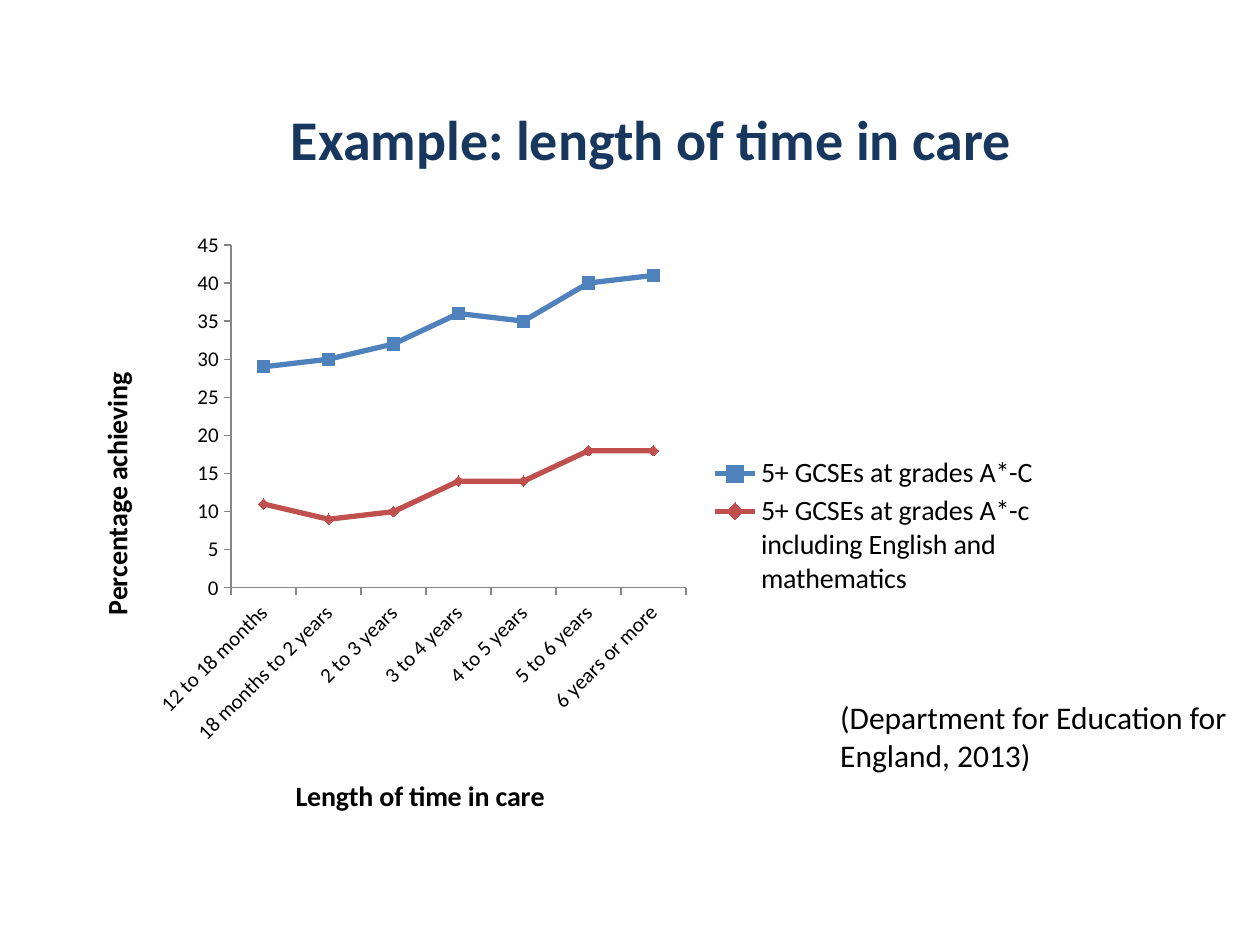
from lxml import etree
from pptx import Presentation
from pptx.chart.data import CategoryChartData
from pptx.dml.color import RGBColor
from pptx.enum.chart import XL_CHART_TYPE, XL_LEGEND_POSITION, XL_MARKER_STYLE, XL_TICK_MARK
from pptx.enum.text import MSO_ANCHOR, PP_ALIGN
from pptx.oxml.ns import qn
from pptx.util import Inches, Pt

LINE = XL_CHART_TYPE.LINE_MARKERS
RIGHT = XL_LEGEND_POSITION.RIGHT
SQUARE, DIAMOND = XL_MARKER_STYLE.SQUARE, XL_MARKER_STYLE.DIAMOND
OUT = XL_TICK_MARK.OUTSIDE
MIDDLE, TOP = MSO_ANCHOR.MIDDLE, MSO_ANCHOR.TOP
CENTER, LEFT = PP_ALIGN.CENTER, PP_ALIGN.LEFT

COLORS = {"navy": "17375E", "black": "000000", "blue": "4F81BD", "red": "C0504D", "gray": "868686"}
TIMES = ["12 to 18 months", "18 months to 2 years", "2 to 3 years", "3 to 4 years",
         "4 to 5 years", "5 to 6 years", "6 years or more"]
SERIES = [
    ("5+ GCSEs at grades A*-C", [29, 30, 32, 36, 35, 40, 41], "blue", SQUARE, 7),
    ("5+ GCSEs at grades A*-c including English and mathematics",
     [11, 9, 10, 14, 14, 18, 18], "red", DIAMOND, 6),
]


def rgb(name):
    return RGBColor.from_string(COLORS[name])


def style(font, size, color="black", bold=False):
    looks = {"name": "Calibri", "size": Pt(size), "bold": bold}
    for key, value in looks.items():
        setattr(font, key, value)
    font.color.rgb = rgb(color)


def pin(parent, index, **place):
    """Fix a chart part at fractions of the chart's size."""
    for old in parent.findall(qn("c:layout")):
        parent.remove(old)
    layout = etree.Element(qn("c:layout"))
    manual = etree.SubElement(layout, qn("c:manualLayout"))
    if parent.tag == qn("c:plotArea"):
        place = {"layoutTarget": "inner", **place}
    place = {**place}
    modes = {"xMode": "edge", "yMode": "edge"}
    target = place.pop("layoutTarget", None)
    if target:
        modes = {"layoutTarget": target, **modes}
    for key, value in {**modes, **place}.items():
        etree.SubElement(manual, qn(f"c:{key}")).set("val", str(value))
    parent.insert(index, layout)


def add_text(slide, box, text, size, color="black", bold=False, align=LEFT, anchor=TOP):
    frame = slide.shapes.add_textbox(*map(Inches, box)).text_frame
    frame.word_wrap = True
    frame.vertical_anchor = anchor
    para = frame.paragraphs[0]
    para.alignment = align
    run = para.add_run()
    run.text = text
    style(run.font, size, color, bold)


def set_axis(axis, title, x, y):
    looks = {"has_major_gridlines": False, "major_tick_mark": OUT}
    for key, value in looks.items():
        setattr(axis, key, value)
    style(axis.tick_labels.font, 12)
    axis.format.line.color.rgb = rgb("gray")
    frame = axis.axis_title.text_frame
    frame.text = title
    style(frame.paragraphs[0].runs[0].font, 16, bold=True)
    pin(axis.axis_title._element, 1, x=x, y=y)


def add_lines(slide, box):
    data = CategoryChartData()
    data.categories = TIMES
    for name, values, *_ in SERIES:
        data.add_series(name, values)
    chart = slide.shapes.add_chart(LINE, *map(Inches, box), data).chart
    style(chart.font, 10)
    chart.has_title = False
    pin(chart._chartSpace.chart.plotArea, 0, x=0.17, y=0.04, w=0.46, h=0.56)

    set_axis(chart.category_axis, "Length of time in care", 0.23, 0.9)
    set_axis(chart.value_axis, "Percentage achieving", 0.03, 0.24)
    scale = {"minimum_scale": 0, "maximum_scale": 45, "major_unit": 5}
    for key, value in scale.items():
        setattr(chart.value_axis, key, value)

    chart.has_legend = True
    legend = chart.legend
    legend.position = RIGHT
    legend.include_in_layout = False
    style(legend.font, 16)
    pin(legend._element, 1, x=0.65, y=0.38, w=0.34, h=0.24)

    for line, (_, _, color, mark, size) in zip(chart.plots[0].series, SERIES):
        line.smooth = False
        line.format.line.width = Pt(3)
        line.format.line.color.rgb = rgb(color)
        line.marker.style = mark
        line.marker.size = size
        fill = line.marker.format.fill
        fill.solid()
        fill.fore_color.rgb = rgb(color)
        line.marker.format.line.color.rgb = rgb(color)


def main():
    deck = Presentation()
    deck.slide_width, deck.slide_height = Inches(10), Inches(7.5)
    slide = deck.slides.add_slide(deck.slide_layouts[6])
    add_text(slide, (0.67, 0.47, 9, 1.25), "Example: length of time in care",
             32, "navy", True, CENTER, MIDDLE)
    add_lines(slide, (0.5, 1.75, 7.85, 4.86))
    add_text(slide, (6.57, 5.49, 3.43, 0.71), "(Department for Education for England, 2013)", 18)
    deck.save("out.pptx")


if __name__ == "__main__":
    main()
